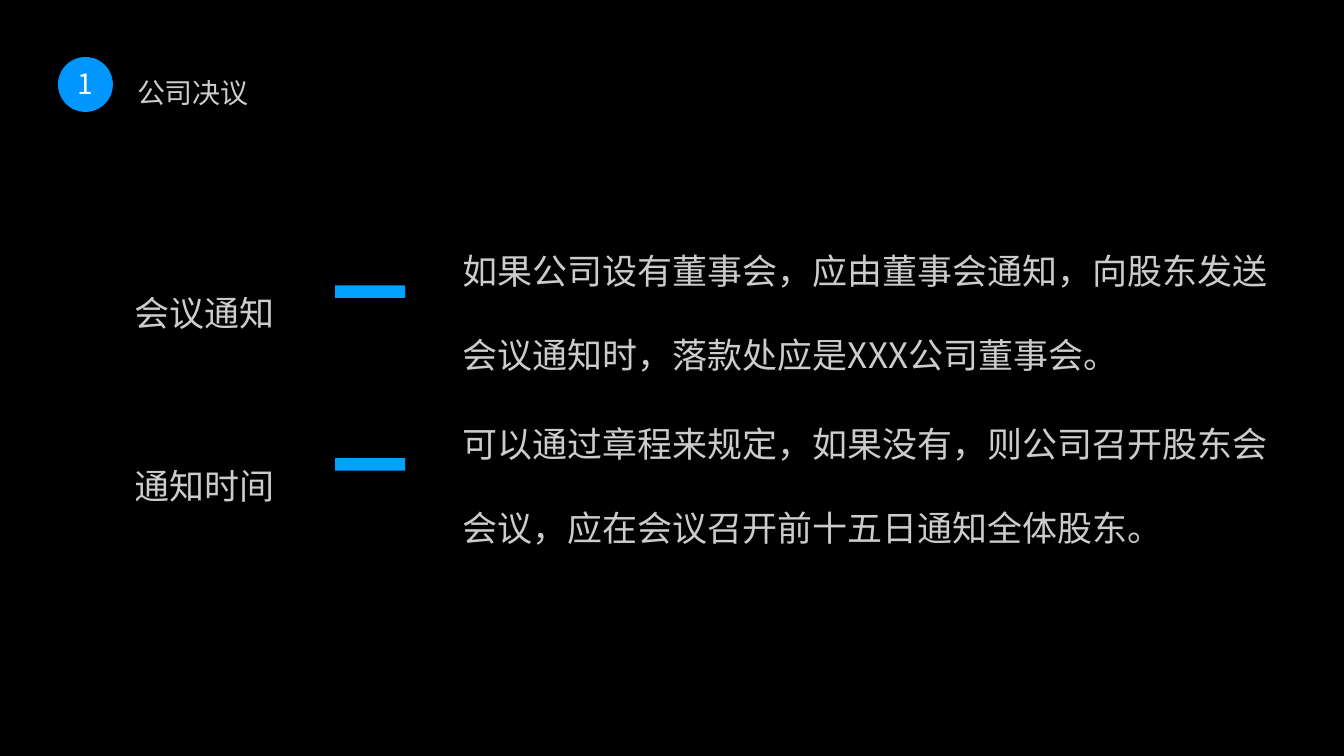
from dataclasses import dataclass

import pptx
import pptx.dml.color
import pptx.enum.shapes
import pptx.enum.text
import pptx.oxml
import pptx.oxml.ns
import pptx.util
from pptx.util import Pt

RGBColor = pptx.dml.color.RGBColor
MSO_ANCHOR = pptx.enum.text.MSO_ANCHOR
MSO_AUTO_SIZE = pptx.enum.text.MSO_AUTO_SIZE
MSO_SHAPE = pptx.enum.shapes.MSO_SHAPE
PP_ALIGN = pptx.enum.text.PP_ALIGN

BLACK = RGBColor(0x00, 0x00, 0x00)
WHITE = RGBColor(0xFF, 0xFF, 0xFF)
BADGE_BLUE = RGBColor(0x00, 0x96, 0xFF)
BAR_BLUE = RGBColor(0x00, 0xA2, 0xFF)
FONT = "Noto Sans CJK SC"
INSET = 5.76
FIRST_ROW_CENTRE = 416.5
ROW_PITCH = 247


@dataclass(frozen=True)
class Box:
    left: float
    top: float
    width: float
    height: float

    def lengths(self) -> list[pptx.util.Length]:
        return [Pt(v) for v in (self.left, self.top, self.width, self.height)]


@dataclass(frozen=True)
class Rule:
    label: str
    explanation: str


RULES = [
    Rule("会议通知", "如果公司设有董事会，应由董事会通知，向股东发送会议通知时，落款处应是XXX公司董事会。"),
    Rule("通知时间", "可以通过章程来规定，如果没有，则公司召开股东会会议，应在会议召开前十五日通知全体股东。"),
]


def write(frame, text: str, size: float, align: PP_ALIGN, anchor: MSO_ANCHOR,
          spacing: float = 1.0, opacity: int = 100) -> None:
    """Fill a text frame with one styled run."""
    frame.margin_left = frame.margin_right = Pt(INSET)
    frame.margin_top = frame.margin_bottom = Pt(INSET)
    frame.vertical_anchor = anchor
    paragraph = frame.paragraphs[0]
    paragraph.alignment = align
    paragraph.line_spacing = spacing
    run = paragraph.add_run()
    run.text = text
    run.font.size = Pt(size)
    run.font.name = FONT
    run.font.color.rgb = WHITE
    properties = run.font._element
    east_asian = pptx.oxml.parse_xml(
        f'<a:ea {pptx.oxml.ns.nsdecls("a")} typeface="{FONT}"/>')
    properties.find(pptx.oxml.ns.qn("a:latin")).addnext(east_asian)
    if opacity < 100:
        colour = properties.find(".//" + pptx.oxml.ns.qn("a:srgbClr"))
        colour.append(pptx.oxml.parse_xml(
            f'<a:alpha {pptx.oxml.ns.nsdecls("a")} val="{opacity * 1000}"/>'))


def add_caption(slide, box: Box, text: str, size: float, spacing: float,
                align: PP_ALIGN = PP_ALIGN.LEFT, wrap: bool = True) -> None:
    frame = slide.shapes.add_textbox(*box.lengths()).text_frame
    frame.word_wrap = wrap
    frame.auto_size = MSO_AUTO_SIZE.SHAPE_TO_FIT_TEXT
    write(frame, text, size, align, MSO_ANCHOR.MIDDLE, spacing, opacity=80)


def add_solid(slide, kind: MSO_SHAPE, box: Box, colour: RGBColor):
    solid = slide.shapes.add_shape(kind, *box.lengths())
    solid.shadow.inherit = False
    solid.fill.solid()
    solid.fill.fore_color.rgb = colour
    solid.line.fill.background()
    return solid


def add_rule(slide, rule: Rule, centre: float) -> None:
    """Draw label, bar and explanation around one centre line."""
    def centred(left: float, width: float, height: float) -> Box:
        return Box(left, centre - height / 2, width, height)

    add_caption(slide, centred(182.9, 219.6, 61.2), rule.label, 50, 2, PP_ALIGN.CENTER)
    add_solid(slide, MSO_SHAPE.RECTANGLE, centred(478.8, 100, 18), BAR_BLUE)
    add_caption(slide, centred(655.2, 1177.2, 186.5), rule.explanation, 50, 2)


def main() -> None:
    deck = pptx.Presentation()
    deck.slide_width, deck.slide_height = Pt(1920), Pt(1080)
    slide = deck.slides.add_slide(deck.slide_layouts[6])
    slide.background.fill.solid()
    slide.background.fill.fore_color.rgb = BLACK

    # Heading with numbered badge
    add_caption(slide, Box(190, 95, 172, 51), "公司决议", 40, 1.5, wrap=False)
    badge = add_solid(slide, MSO_SHAPE.OVAL, Box(82.8, 81.4, 78.5, 78.5), BADGE_BLUE)
    write(badge.text_frame, "1", 40, PP_ALIGN.CENTER, MSO_ANCHOR.BOTTOM)

    # Rules on notices
    for index, rule in enumerate(RULES):
        add_rule(slide, rule, FIRST_ROW_CENTRE + index * ROW_PITCH)

    deck.save("out.pptx")


if __name__ == "__main__":
    main()
